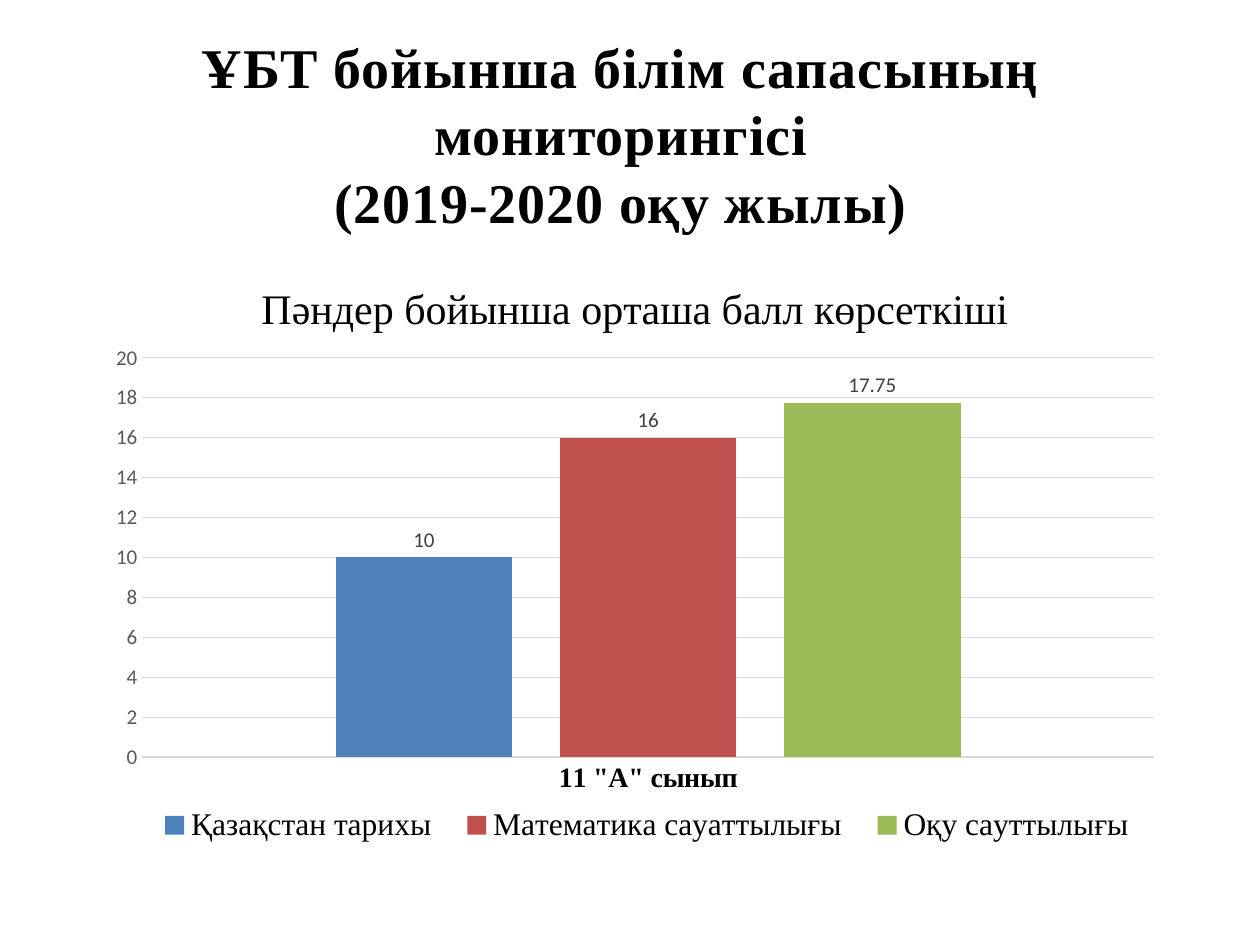
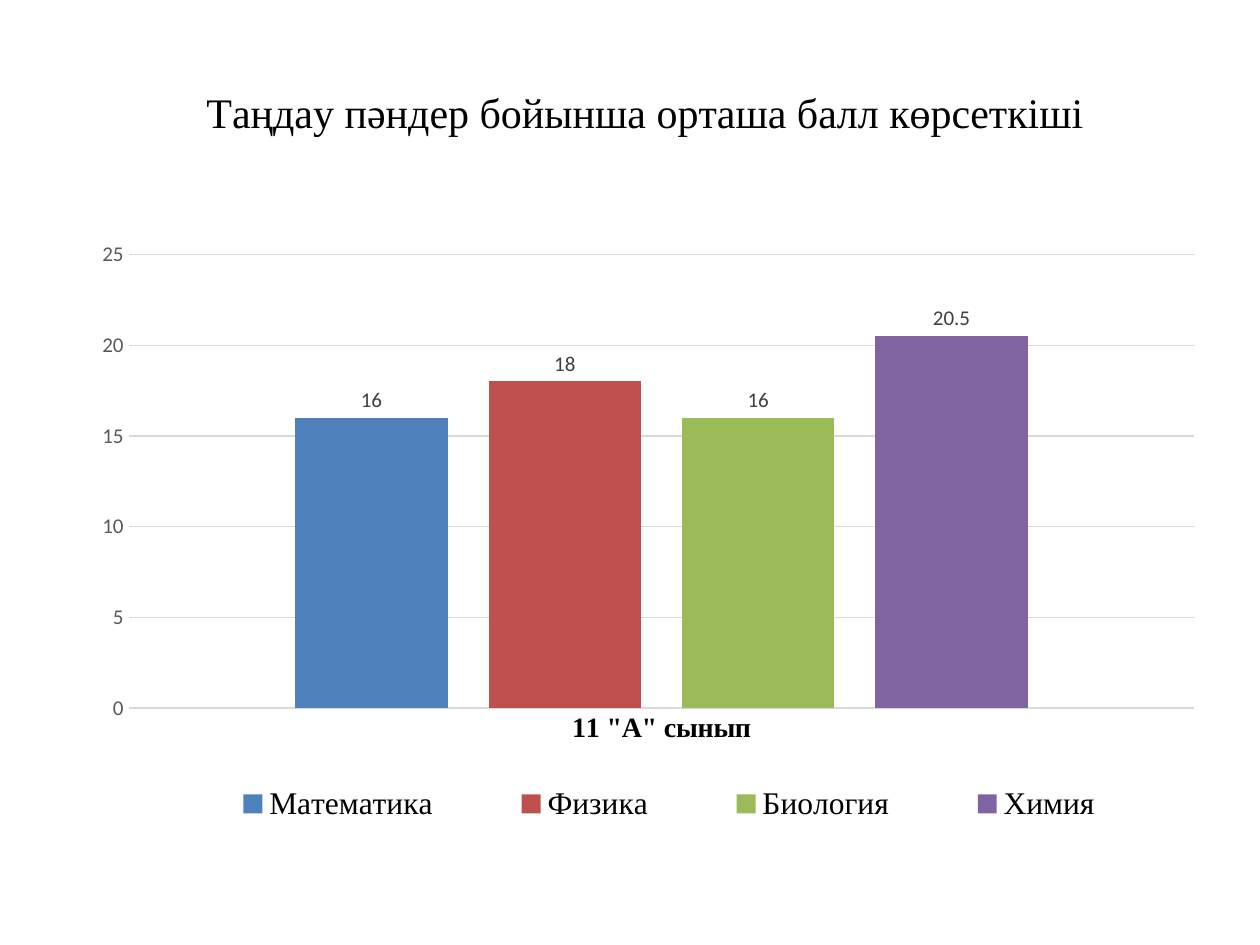
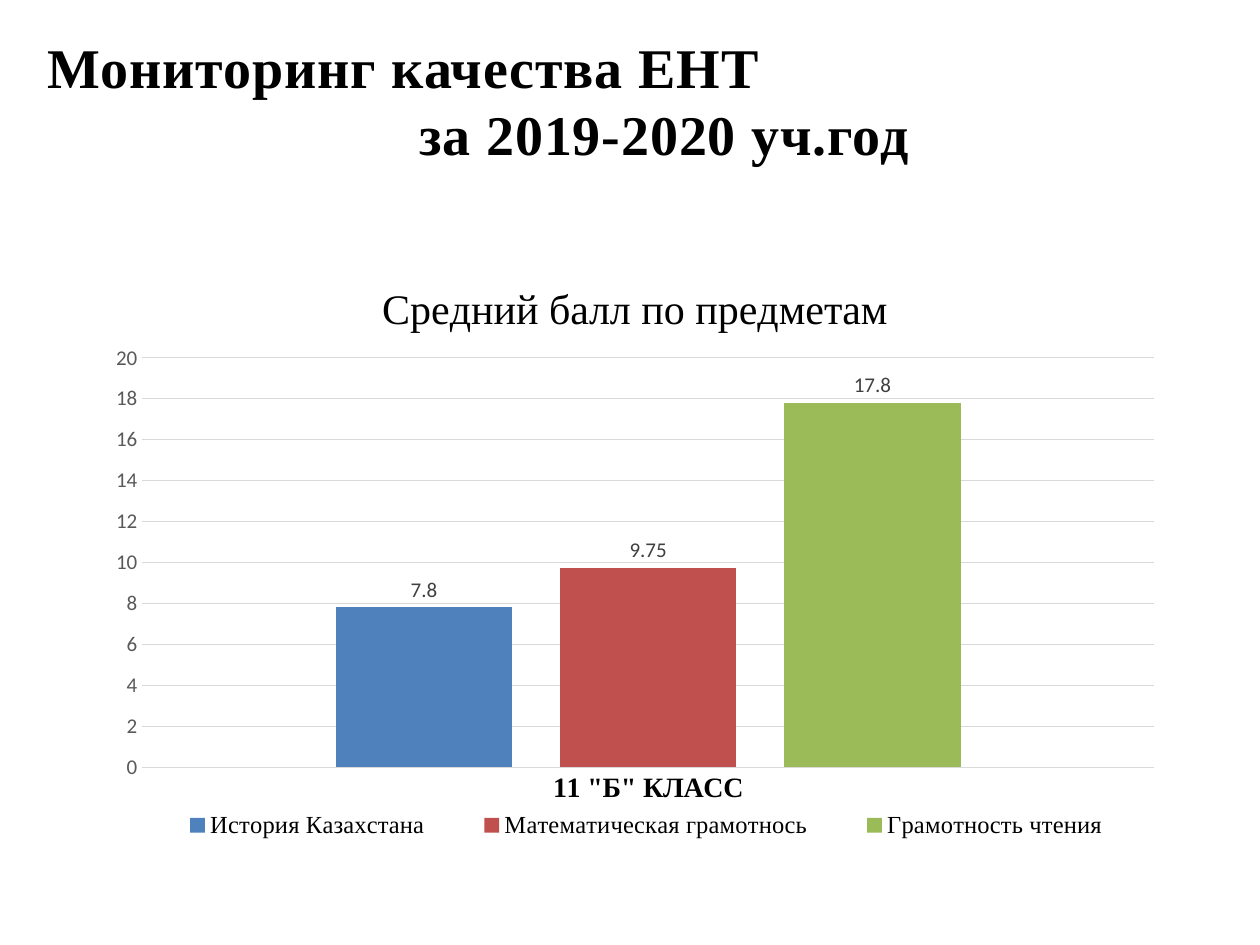
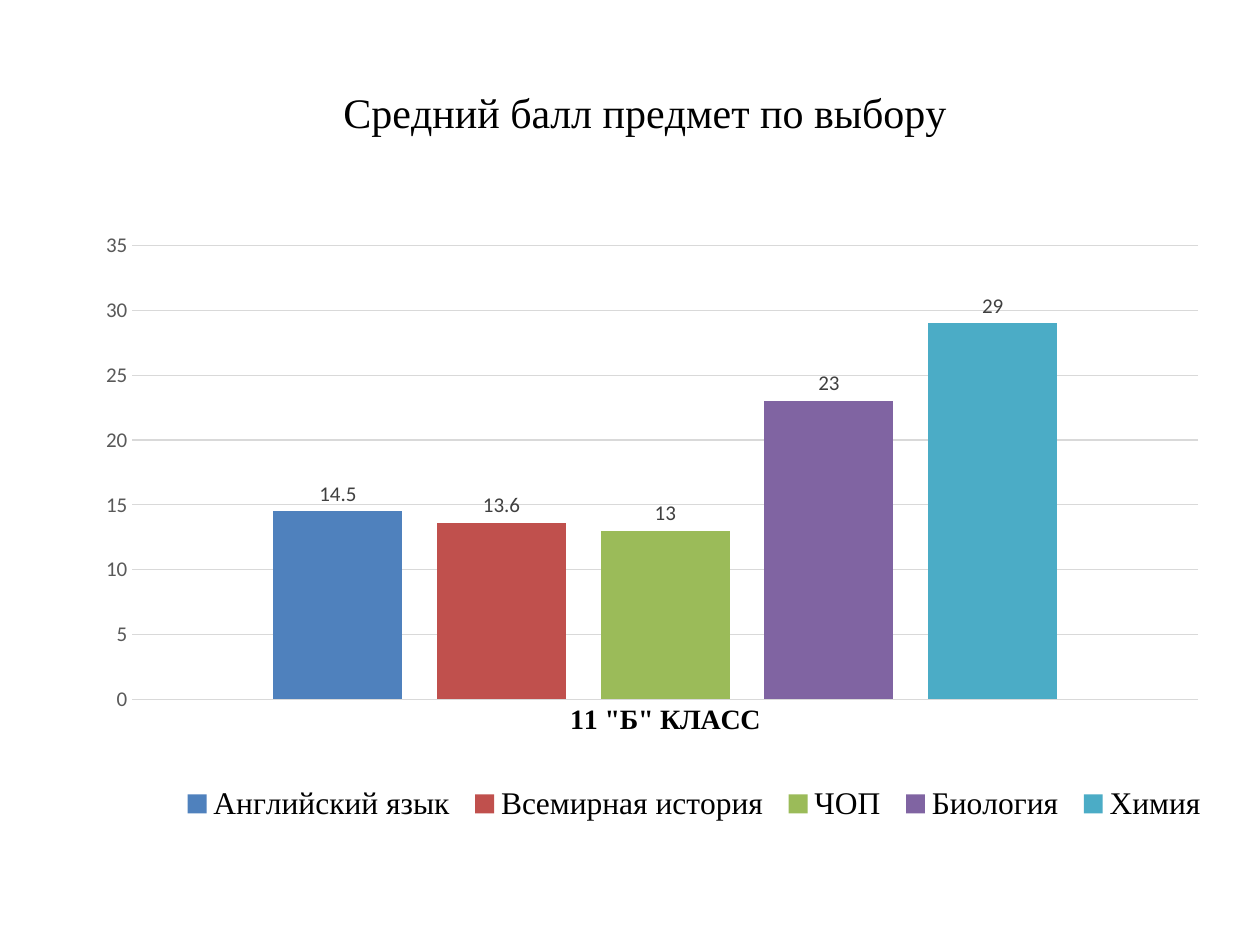
import dataclasses

import lxml.etree
import pptx
import pptx.chart.data
import pptx.dml.color
import pptx.enum.chart
import pptx.enum.text
import pptx.oxml.ns
import pptx.util

Inches = pptx.util.Inches


@dataclasses.dataclass(frozen=True)
class Theme:
    serif: str = "Times New Roman"
    sans: str = "Calibri"
    text: str = "000000"
    axis_text: str = "595959"
    label_text: str = "404040"
    grid: str = "D9D9D9"
    series: tuple = ("4F81BD", "C0504D", "9BBB59", "8064A2", "4BACC6")
    heading_size: int = 32
    chart_title_size: int = 24
    legend_size: int = 18
    small_legend_size: int = 14
    category_size: int = 16
    value_size: int = 12
    base_size: int = 10
    letter_spacing: int = 50  # hundredths of a point
    line_width: float = 0.75


THEME = Theme()

# Boxes are left, top, width, height in inches; plots and legends are relative to their chart
LOWER_CHART = (0.75, 2.02, 8.58, 4.82)
FULL_CHART = (0.59, 0.44, 9.06, 6.4)

SLIDES = [
    {
        "heading": {
            "box": (0.28, 0.21, 9.3, 1.72),
            "lines": ["ҰБТ бойынша білім сапасының мониторингісі", "(2019-2020 оқу жылы)"],
        },
        "chart": {
            "box": LOWER_CHART,
            "plot": (0.38, 0.82, 8.03, 3.17),
            "legend": (0.36, 4.28, 8.05, 0.5),
            "title": "Пәндер бойынша орташа балл көрсеткіші",
            "category": '11 "А" сынып',
            "scores": {"Қазақстан тарихы": 10, "Математика сауаттылығы": 16, "Оқу сауттылығы": 17.75},
        },
    },
    {
        "chart": {
            "box": FULL_CHART,
            "plot": (0.43, 1.58, 8.46, 3.6),
            "legend": (0.72, 5.69, 8, 0.5),
            "title": "Таңдау пәндер бойынша орташа балл көрсеткіші",
            "category": '11 "А" сынып',
            "scores": {"Математика": 16, "Физика": 18, "Биология": 16, "Химия": 20.5},
        },
    },
    {
        "heading": {
            "box": (0.28, 0.21, 9.3, 1.18),
            "lines": ["Мониторинг качества ЕНТ", "за 2019-2020 уч.год"],
            "indents": (0, 2.95),
        },
        "chart": {
            "box": LOWER_CHART,
            "plot": (0.38, 0.82, 8.03, 3.25),
            "legend": (0.35, 4.28, 8.06, 0.5),
            "title": "Средний балл по предметам",
            "category": '11 "Б" КЛАСС',
            "scores": {"История Казахстана": 7.8, "Математическая грамотнось": 9.75, "Грамотность чтения": 17.8},
            "legend_size": THEME.small_legend_size,
        },
    },
    {
        "chart": {
            "box": FULL_CHART,
            "plot": (0.46, 1.51, 8.46, 3.6),
            "legend": (0.78, 5.69, 8.28, 0.5),
            "title": "Средний балл предмет по выбору",
            "category": '11 "Б" КЛАСС',
            "scores": {"Английский язык": 14.5, "Всемирная история": 13.6, "ЧОП": 13, "Биология": 23, "Химия": 29},
        },
    },
]


def set_attributes(target, values):
    for name, value in values.items():
        setattr(target, name, value)


def rgb(color):
    return pptx.dml.color.RGBColor.from_string(color)


def format_font(font, size, color, name, bold=False):
    set_attributes(font, {"size": pptx.util.Pt(size), "name": name, "bold": bold})
    font.color.rgb = rgb(color)


def format_line(line):
    line.color.rgb = rgb(THEME.grid)
    line.width = pptx.util.Pt(THEME.line_width)


def place_part(element, position, chart_box, part_box, settings):
    """Fix a chart part, as fractions of the chart box."""
    tag = pptx.oxml.ns.qn
    for layout in element.findall(tag("c:layout")):
        element.remove(layout)
    layout = lxml.etree.Element(tag("c:layout"))
    manual = lxml.etree.SubElement(layout, tag("c:manualLayout"))
    fractions = {
        name: f"{length / whole:.4f}"
        for name, length, whole in zip("xywh", part_box, chart_box[2:] * 2)
    }
    for name, value in {**settings, "xMode": "edge", "yMode": "edge", **fractions}.items():
        lxml.etree.SubElement(manual, tag(f"c:{name}")).set("val", value)
    element.insert(position, layout)


def add_score_chart(slide, box, plot, legend, title, category, scores, legend_size=THEME.legend_size):
    data = pptx.chart.data.CategoryChartData()
    data.categories = [category]
    for subject, score in scores.items():
        data.add_series(subject, [score])
    chart = slide.shapes.add_chart(
        pptx.enum.chart.XL_CHART_TYPE.COLUMN_CLUSTERED, *map(Inches, box), data
    ).chart
    format_font(chart.font, THEME.base_size, THEME.text, THEME.sans)

    # Title
    chart.has_title = True
    chart.chart_title.include_in_layout = False
    paragraph = chart.chart_title.text_frame.paragraphs[0]
    run = paragraph.add_run()
    run.text = title
    for font in (paragraph.font, run.font):
        format_font(font, THEME.chart_title_size, THEME.text, THEME.serif)

    # Legend, on one line
    chart.has_legend = True
    set_attributes(chart.legend, {
        "position": pptx.enum.chart.XL_LEGEND_POSITION.BOTTOM,
        "include_in_layout": False,
    })
    format_font(chart.legend.font, legend_size, THEME.text, THEME.serif)
    place_part(chart.legend._element, 1, box, legend, {})

    # Axes
    no_tick = pptx.enum.chart.XL_TICK_MARK.NONE
    for axis in (chart.category_axis, chart.value_axis):
        set_attributes(axis, {"major_tick_mark": no_tick, "minor_tick_mark": no_tick})
    format_font(chart.category_axis.tick_labels.font, THEME.category_size, THEME.text, THEME.serif, True)
    format_line(chart.category_axis.format.line)
    format_font(chart.value_axis.tick_labels.font, THEME.value_size, THEME.axis_text, THEME.sans)
    chart.value_axis.format.line.fill.background()
    format_line(chart.value_axis.major_gridlines.format.line)

    # Columns and their labels
    columns = chart.plots[0]
    set_attributes(columns, {"gap_width": 219, "overlap": -27, "vary_by_categories": False})
    for series, color in zip(columns.series, THEME.series):
        series.format.fill.solid()
        series.format.fill.fore_color.rgb = rgb(color)
        labels = series.data_labels
        set_attributes(labels, {
            "show_value": True,
            "position": pptx.enum.chart.XL_LABEL_POSITION.OUTSIDE_END,
        })
        format_font(labels.font, THEME.value_size, THEME.label_text, THEME.sans)
    place_part(columns._element.getparent(), 0, box, plot, {"layoutTarget": "inner"})


def add_heading(slide, box, lines, indents=None):
    """Centre the lines, or start each at its own indent."""
    text_frame = slide.shapes.add_textbox(*map(Inches, box)).text_frame
    set_attributes(text_frame, {
        "word_wrap": True,
        "auto_size": pptx.enum.text.MSO_AUTO_SIZE.SHAPE_TO_FIT_TEXT,
    })
    alignment = pptx.enum.text.PP_ALIGN.LEFT if indents else pptx.enum.text.PP_ALIGN.CENTER
    for index, line in enumerate(lines):
        paragraph = text_frame.add_paragraph() if index else text_frame.paragraphs[0]
        paragraph.alignment = alignment
        if indents:
            paragraph._p.get_or_add_pPr().set("marL", str(Inches(indents[index])))
        run = paragraph.add_run()
        run.text = line
        format_font(run.font, THEME.heading_size, THEME.text, THEME.serif, True)
        run._r.get_or_add_rPr().set("spc", str(THEME.letter_spacing))


def main():
    presentation = pptx.Presentation()
    set_attributes(presentation, {"slide_width": Inches(10), "slide_height": Inches(7.5)})
    for content in SLIDES:
        slide = presentation.slides.add_slide(presentation.slide_layouts[6])
        add_score_chart(slide, **content["chart"])
        if "heading" in content:
            add_heading(slide, **content["heading"])
    presentation.save("out.pptx")


if __name__ == "__main__":
    main()
